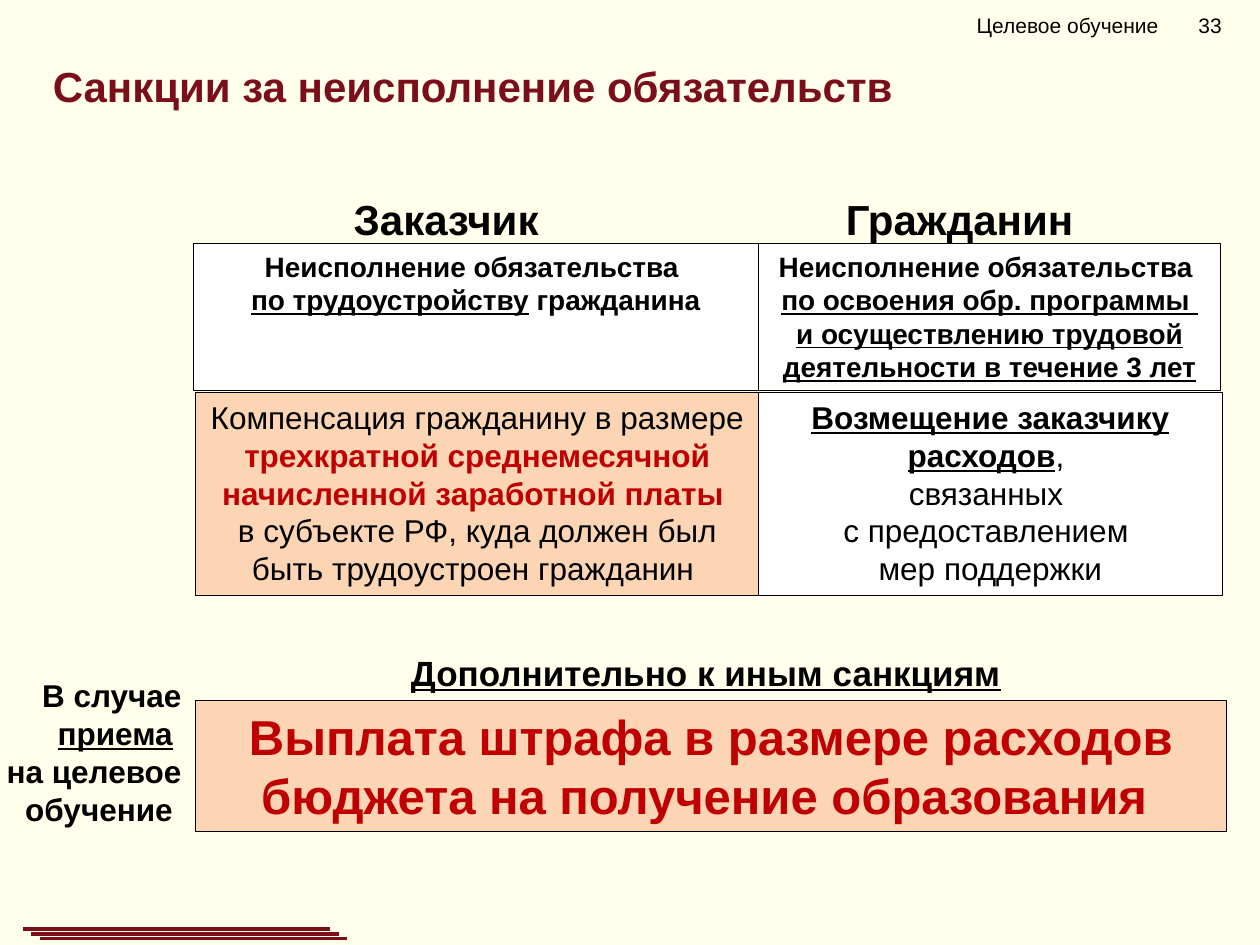
from pptx import Presentation
from pptx.dml.color import RGBColor
from pptx.enum.shapes import MSO_CONNECTOR, MSO_SHAPE
from pptx.enum.text import MSO_ANCHOR, MSO_AUTO_SIZE, PP_ALIGN
from pptx.oxml import parse_xml
from pptx.oxml.ns import nsdecls
from pptx.util import Cm, Pt

LEFT, CENTER, RIGHT = PP_ALIGN.LEFT, PP_ALIGN.CENTER, PP_ALIGN.RIGHT
TOP, MIDDLE = MSO_ANCHOR.TOP, MSO_ANCHOR.MIDDLE
NO_AUTOFIT = MSO_AUTO_SIZE.NONE
RECTANGLE = MSO_SHAPE.RECTANGLE
STRAIGHT = MSO_CONNECTOR.STRAIGHT

THEME = {
    "font": "Arial",
    "colors": {"background": "FFFFEB", "title": "7B0F19", "text": "000000",
               "accent": "C00000", "peach": "FCD5B5", "white": "FFFFFF"},
    "sizes": {"header": 12, "obligation": 16, "body": 18, "extra": 20,
              "heading": 24, "penalty": 28},
}

PLAIN = {}
BOLD = {"bold": True}
UNDERLINED = {"bold": True, "underline": True}
ACCENT = {"bold": True, "color": "accent"}
TITLE_STYLE = {"bold": True, "color": "title"}

TITLE = [[("Санкции за неисполнение обязательств", TITLE_STYLE)]]
HEADER = [[("Целевое обучение\t33", PLAIN)]]
HEADINGS = ["Заказчик", "Гражданин"]
OBLIGATIONS = [
    [[("Неисполнение обязательства ", BOLD)],
     [("по трудоустройству", UNDERLINED), (" гражданина", BOLD)]],
    [[("Неисполнение обязательства ", BOLD)],
     [("по освоения обр. программы ", UNDERLINED)],
     [("и осуществлению трудовой деятельности в течение 3 лет", UNDERLINED)]],
]
SANCTIONS = [
    [[("Компенсация гражданину в размере ", PLAIN),
      ("трехкратной среднемесячной начисленной заработной платы ", ACCENT)],
     [("в субъекте РФ, куда должен был быть трудоустроен гражданин ", PLAIN)]],
    [[("Возмещение заказчику расходов", UNDERLINED), (", ", PLAIN)],
     [("связанных ", PLAIN)],
     [("с предоставлением ", PLAIN)],
     [("мер поддержки", PLAIN)]],
]
SANCTION_FILLS = ["peach", "white"]
CASE = [[("В случае ", BOLD), ("приема", UNDERLINED), (" ", BOLD)],
        [("на целевое обучение ", BOLD)]]
EXTRA = [[("Дополнительно к иным санкциям", UNDERLINED)]]
PENALTY = [[("Выплата штрафа в размере расходов бюджета на получение образования ", ACCENT)]]

HEADING_COLUMNS = [(3.89, 10.21), (14.05, 10.59)]
OBLIGATION_COLUMNS = [(3.89, 11.4), (15.29, 9.32)]
SANCTION_COLUMNS = [(3.94, 11.37), (15.29, 9.35)]
STRIPE = {"left": 0.46, "top": 18.72, "length": 6.2, "step_x": 0.17, "step_y": 0.1}


def color(name):
    return RGBColor.from_string(THEME["colors"][name])


def apply(target, values):
    for name, value in values.items():
        setattr(target, name, value)


def write(shape, paragraphs, size, align=CENTER, anchor=TOP):
    frame = shape.text_frame
    apply(frame, {"word_wrap": True, "auto_size": NO_AUTOFIT, "vertical_anchor": anchor})
    for index, runs in enumerate(paragraphs):
        paragraph = frame.add_paragraph() if index else frame.paragraphs[0]
        paragraph.alignment = align
        for text, style in runs:
            run = paragraph.add_run()
            run.text = text
            apply(run.font, {"name": THEME["font"], "size": Pt(THEME["sizes"][size]),
                             "bold": style.get("bold", False),
                             "underline": style.get("underline", False)})
            run.font.color.rgb = color(style.get("color", "text"))


def add_text(slide, box, paragraphs, size, **format_values):
    shape = slide.shapes.add_textbox(*map(Cm, box))
    write(shape, paragraphs, size, **format_values)
    return shape


def add_panel(slide, box, paragraphs, size, fill):
    shape = slide.shapes.add_shape(RECTANGLE, *map(Cm, box))
    shape.shadow.inherit = False
    shape.fill.solid()
    shape.fill.fore_color.rgb = color(fill)
    shape.line.color.rgb = color("text")
    shape.line.width = Pt(0.25)
    write(shape, paragraphs, size)


def add_title(slide):
    title = slide.shapes.title
    apply(title, dict(zip(("left", "top", "width", "height"), map(Cm, (0.81, 1.14, 23.6, 1.19)))))
    write(title, TITLE, "heading", align=LEFT, anchor=MIDDLE)


def add_header(slide):
    header = add_text(slide, (18.9, 0, 6.5, 1.02), HEADER, "header", align=LEFT, anchor=MIDDLE)
    header.text_frame.margin_left = Cm(0.79)
    properties = header.text_frame.paragraphs[0]._p.get_or_add_pPr()
    properties.append(parse_xml(
        f'<a:tabLst {nsdecls("a")}><a:tab pos="{Cm(4.47)}" algn="l"/></a:tabLst>'))


def add_stripes(slide):
    for index in range(3):
        left = STRIPE["left"] + index * STRIPE["step_x"]
        top = STRIPE["top"] + index * STRIPE["step_y"]
        line = slide.shapes.add_connector(
            STRAIGHT, Cm(left), Cm(top), Cm(left + STRIPE["length"]), Cm(top))
        line.line.color.rgb = color("title")
        line.line.width = Pt(2.25)
        line._element.spPr.append(parse_xml(f'<a:effectLst {nsdecls("a")}/>'))


def main():
    presentation = Presentation()
    apply(presentation, {"slide_width": Cm(25.4), "slide_height": Cm(19.05)})
    slide = presentation.slides.add_slide(presentation.slide_layouts[5])
    slide.background.fill.solid()
    slide.background.fill.fore_color.rgb = color("background")

    add_title(slide)
    for (left, width), heading in zip(HEADING_COLUMNS, HEADINGS):
        add_text(slide, (left, 3.78, width, 1.27), [[(heading, BOLD)]], "heading")
    add_text(slide, (-0.97, 13.51, 4.88, 3.33), CASE, "body", align=RIGHT)
    for (left, width), sanction, fill in zip(SANCTION_COLUMNS, SANCTIONS, SANCTION_FILLS):
        add_panel(slide, (left, 7.9, width, 4.1), sanction, "body", fill)
    add_panel(slide, (3.94, 14.12, 20.78, 2.64), PENALTY, "penalty", "peach")
    for (left, width), obligation in zip(OBLIGATION_COLUMNS, OBLIGATIONS):
        add_panel(slide, (left, 4.9, width, 2.97), obligation, "obligation", "white")
    add_text(slide, (3.84, 13, 20.78, 1.12), EXTRA, "extra")
    add_header(slide)
    add_stripes(slide)
    presentation.save("out.pptx")


if __name__ == "__main__":
    main()
